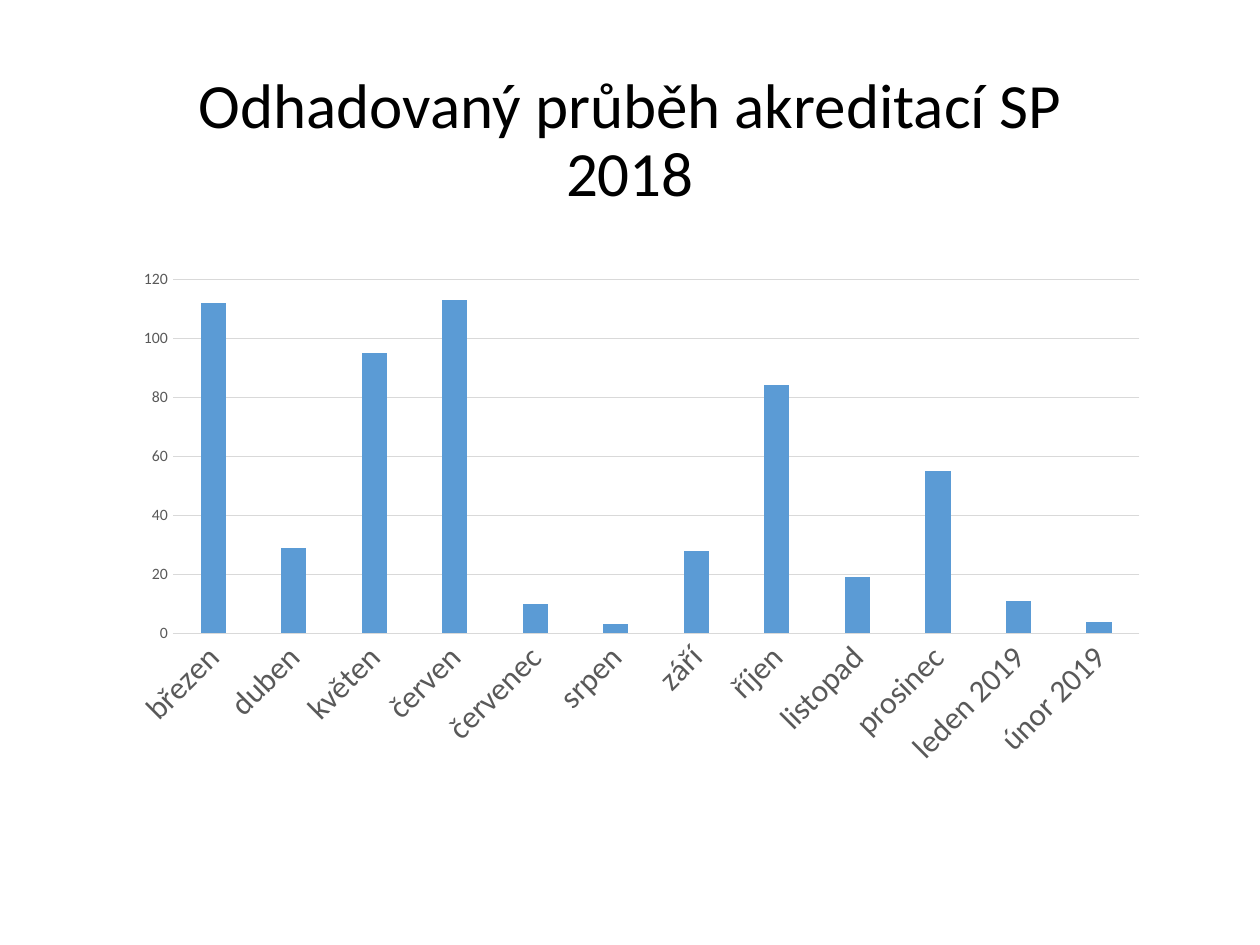
from lxml.etree import SubElement
from pptx import Presentation
from pptx.chart.data import CategoryChartData
from pptx.dml.color import RGBColor
from pptx.enum.chart import XL_CHART_TYPE as ChartType, XL_TICK_MARK as TickMark
from pptx.enum.text import MSO_ANCHOR as Anchor, PP_ALIGN as Align
from pptx.oxml.ns import qn
from pptx.util import Pt

EMU_PER_PX = 914400 / 126
AUTO_ROTATION = -1000 * 60000
FONT = "Calibri"
BLACK = RGBColor(0x00, 0x00, 0x00)
GREY = RGBColor(0x59, 0x59, 0x59)
LIGHT_GREY = RGBColor(0xD9, 0xD9, 0xD9)
BLUE = RGBColor(0x5B, 0x9B, 0xD5)

TITLE = "Odhadovaný průběh akreditací SP\v2018"
ACCREDITATIONS = {
    "březen": 112, "duben": 29, "květen": 95, "červen": 113,
    "červenec": 10, "srpen": 3, "září": 28, "říjen": 84,
    "listopad": 19, "prosinec": 55, "leden 2019": 11, "únor 2019": 4,
}


def emu(px):
    return round(px * EMU_PER_PX)


def set_values(target, values):
    for name, value in values.items():
        setattr(target, name, value)


def set_font(font, size, color):
    set_values(font, {"name": FONT, "size": Pt(size), "bold": False})
    font.color.rgb = color


def set_line(line):
    line.color.rgb = LIGHT_GREY
    line.width = Pt(0.75)


def add_title(page, box):
    frame = page.shapes.add_textbox(*map(emu, box)).text_frame
    set_values(frame, {"word_wrap": True, "vertical_anchor": Anchor.MIDDLE})
    para = frame.paragraphs[0]
    set_values(para, {"text": TITLE, "alignment": Align.CENTER, "line_spacing": 0.9})
    set_font(para.font, 36, BLACK)
    for span in para.runs:
        set_font(span.font, 36, BLACK)


def place_plot(chart, fractions):
    """Fix the inner plot area as x, y, w, h fractions of the chart."""
    area = chart._chartSpace.chart.plotArea
    for old in area.findall(qn("c:layout")):
        area.remove(old)
    layout = SubElement(area, qn("c:layout"))
    area.insert(0, layout)
    manual = SubElement(layout, qn("c:manualLayout"))
    settings = {"layoutTarget": "inner", "xMode": "edge", "yMode": "edge"}
    settings.update(zip("xywh", fractions))
    for tag, value in settings.items():
        SubElement(manual, qn(f"c:{tag}")).set("val", str(value))


def format_axes(chart):
    months, counts = chart.category_axis, chart.value_axis
    for axis, size in ((months, 18), (counts, 9)):
        set_values(axis, {"major_tick_mark": TickMark.NONE,
                          "minor_tick_mark": TickMark.NONE})
        set_font(axis.tick_labels.font, size, GREY)
        body = axis._element.find(qn("c:txPr")).find(qn("a:bodyPr"))
        body.set("rot", str(AUTO_ROTATION))
        body.set("vert", "horz")
    set_line(months.format.line)
    counts.has_major_gridlines = True
    set_line(counts.major_gridlines.format.line)
    counts.format.line.fill.background()


def add_month_chart(page, box):
    data = CategoryChartData()
    data.categories = list(ACCREDITATIONS)
    data.add_series("Series 1", list(ACCREDITATIONS.values()))
    chart = page.shapes.add_chart(
        ChartType.COLUMN_CLUSTERED, *map(emu, box), data).chart
    set_values(chart, {"has_title": False, "has_legend": False})
    set_font(chart.font, 10, BLACK)
    plot = chart.plots[0]
    set_values(plot, {"gap_width": 219, "overlap": -27, "vary_by_categories": False})
    fill = plot.series[0].format.fill
    fill.solid()
    fill.fore_color.rgb = BLUE
    format_axes(chart)
    place_plot(chart, (0.08, 0.13, 0.89, 0.54))


def main():
    deck = Presentation()
    set_values(deck, {"slide_width": emu(1260), "slide_height": emu(945)})
    page = deck.slides.add_slide(deck.slide_layouts[6])
    add_title(page, (87, 50, 1086, 184))
    add_month_chart(page, (86, 194, 1086, 656))
    deck.save("out.pptx")


if __name__ == "__main__":
    main()
